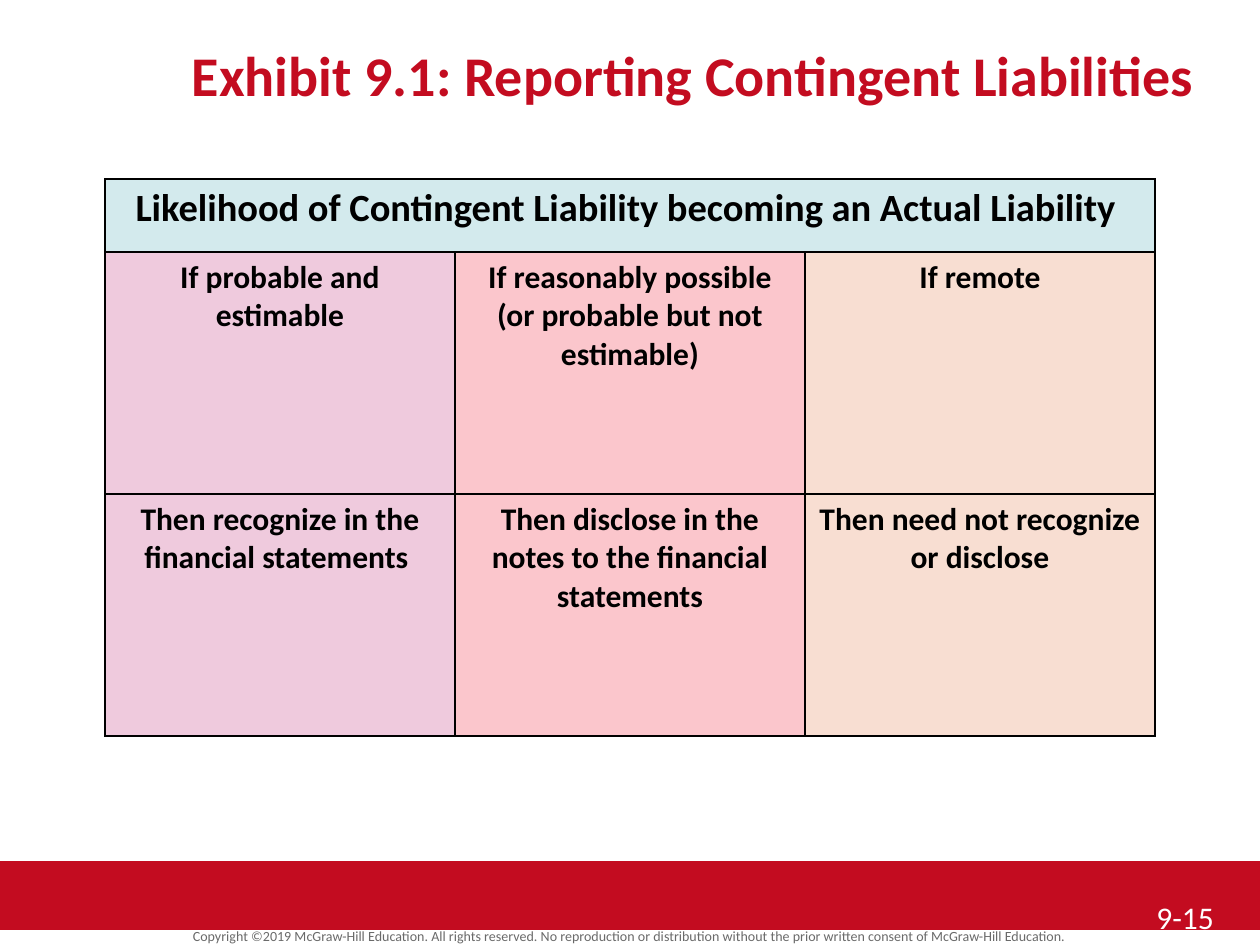
from lxml import etree
from pptx import Presentation
from pptx.dml.color import RGBColor
from pptx.enum.shapes import MSO_SHAPE
from pptx.enum.text import MSO_ANCHOR, PP_ALIGN
from pptx.oxml.ns import qn
from pptx.util import Pt

RECTANGLE = MSO_SHAPE.RECTANGLE
LEFT, CENTER = PP_ALIGN.LEFT, PP_ALIGN.CENTER
TOP, MIDDLE = MSO_ANCHOR.TOP, MSO_ANCHOR.MIDDLE
PX = 914400 / 126
BORDER_SIDES = ("a:lnL", "a:lnR", "a:lnT", "a:lnB")
COLORS = {
    "red": "C30C20",
    "white": "FFFFFF",
    "black": "000000",
    "gray": "6A6A6A",
    "aqua": "D3EAED",
    "mauve": "EFCADD",
    "pink": "FBC6CC",
    "peach": "F8DED2",
}
HEADING = "Likelihood of Contingent Liability becoming an Actual Liability "
OUTCOMES = [
    ("mauve", "If probable and estimable",
     "Then recognize in the financial statements "),
    ("pink", "If reasonably possible (or probable but not estimable)",
     "Then disclose in the notes to the financial statements"),
    ("peach", "If remote", "Then need not recognize or disclose"),
]
COPYRIGHT = ("Copyright ©2019 McGraw-Hill Education. All rights reserved. "
             "No reproduction or distribution without the prior written "
             "consent of McGraw-Hill Education.")


def px(*lengths):
    return [round(length * PX) for length in lengths]


def rgb(name):
    return RGBColor.from_string(COLORS[name])


class SlideBuilder:
    """Holds the text style and the current slide, and adds elements to it."""

    def __init__(self, slide, font="Calibri"):
        self.slide = slide
        self.font = font

    def fill_frame(self, frame, text, size, color, bold=False, **layout):
        para = frame.paragraphs[0]
        for name, value in layout.items():
            setattr(para, name, value)
        span = para.add_run()
        span.text = text
        formats = {"name": self.font, "size": Pt(size), "bold": bold}
        for name, value in formats.items():
            setattr(span.font, name, value)
        span.font.color.rgb = rgb(color)

    def band(self, bounds, color):
        shape = self.slide.shapes.add_shape(RECTANGLE, *px(*bounds))
        shape.shadow.inherit = False
        shape.fill.solid()
        shape.fill.fore_color.rgb = rgb(color)
        shape.line.fill.background()

    def text(self, bounds, text, size, color, anchor=TOP, **style):
        frame = self.slide.shapes.add_textbox(*px(*bounds)).text_frame
        frame.word_wrap = True
        frame.vertical_anchor = anchor
        self.fill_frame(frame, text, size, color, **style)

    def table(self, left, top, column_width, row_heights, columns):
        bounds = px(left, top, column_width * columns, sum(row_heights))
        table = self.slide.shapes.add_table(
            len(row_heights), columns, *bounds).table
        table.first_row = table.horz_banding = False
        for column in table.columns:
            column.width = px(column_width)[0]
        for row, height in zip(table.rows, row_heights):
            row.height = px(height)[0]
        return table

    def cell(self, cell, fill, text="", size=18):
        properties = cell._tc.get_or_add_tcPr()
        for side in BORDER_SIDES:
            line = etree.SubElement(properties, qn(side), w=str(Pt(1)))
            solid = etree.SubElement(line, qn("a:solidFill"))
            etree.SubElement(solid, qn("a:srgbClr"), val=COLORS["black"])
        cell.fill.solid()
        cell.fill.fore_color.rgb = rgb(fill)
        if text:
            self.fill_frame(cell.text_frame, text, size, "black", bold=True,
                            alignment=CENTER)


def main():
    deck = Presentation()
    deck.slide_width, deck.slide_height = px(1260, 945)
    page = SlideBuilder(deck.slides.add_slide(deck.slide_layouts[6]))

    page.band((0, 861, 1260, 69), "red")
    page.text((0, 925, 1260, 24), COPYRIGHT, 8, "gray",
              alignment=CENTER, line_spacing=0.8)
    page.text((126, 32, 1134, 84), "Exhibit 9.1: Reporting Contingent Liabilities",
              32, "red", anchor=MIDDLE, bold=True, alignment=CENTER)
    page.text((1144, 892, 116, 53), "9-15", 18, "white", alignment=LEFT)

    table = page.table(105, 179, 350, (73, 242, 242), len(OUTCOMES))
    table.cell(0, 0).merge(table.cell(0, len(OUTCOMES) - 1))
    for column, (fill, condition, treatment) in enumerate(OUTCOMES):
        page.cell(table.cell(0, column), "aqua", "" if column else HEADING, 22)
        page.cell(table.cell(1, column), fill, condition)
        page.cell(table.cell(2, column), fill, treatment)

    deck.save("out.pptx")


if __name__ == "__main__":
    main()
